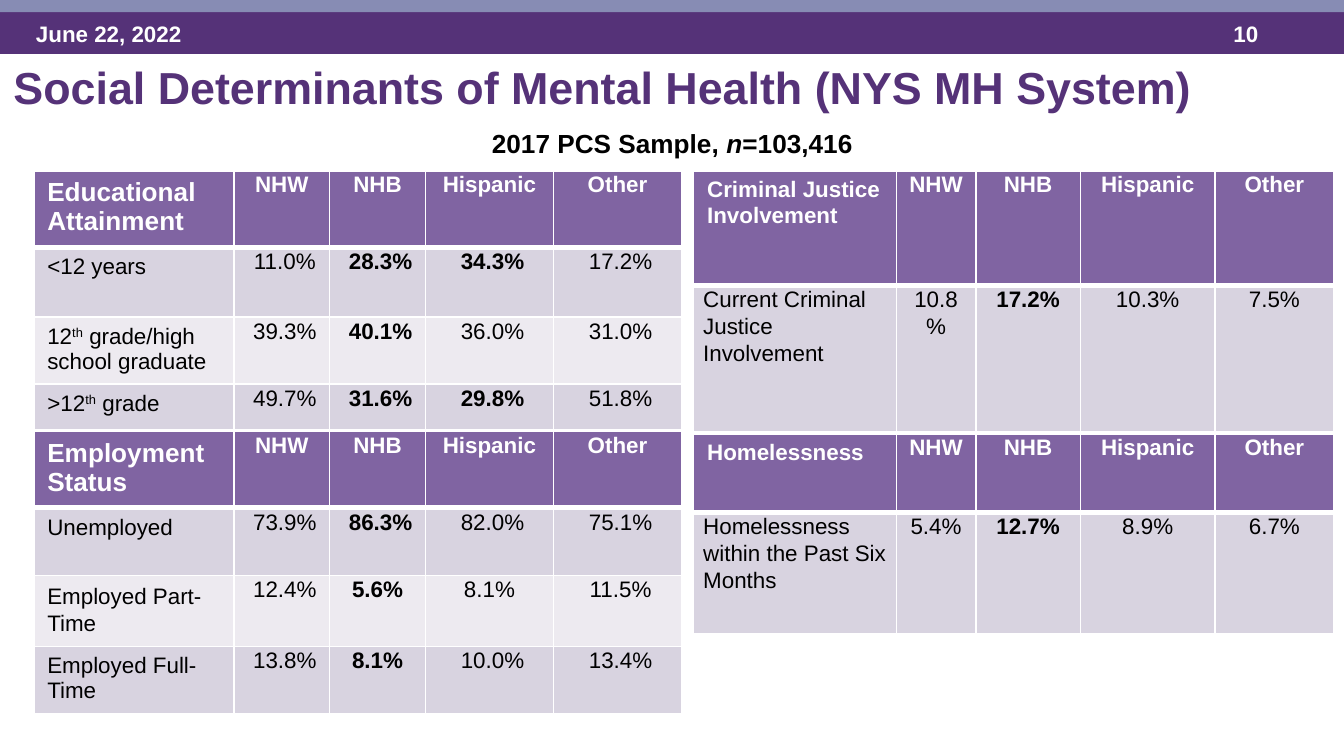
"""Build the slide on social determinants of mental health with its four tables."""
from pptx import Presentation
from pptx.dml.color import RGBColor
from pptx.enum.shapes import MSO_SHAPE
from pptx.enum.text import MSO_ANCHOR, PP_ALIGN
from pptx.oxml import parse_xml
from pptx.oxml.ns import nsdecls
from pptx.util import Cm, Pt

COLORS = {
    "white": "FFFFFF", "black": "000000", "purple": "553278", "blue": "878CB4",
    "header": "8064A2", "dark": "D8D3E0", "light": "EDEAF0",
}
GROUPS = ["NHW", "NHB", "Hispanic", "Other"]
LEFT_COLUMNS = [3.78, 1.81, 1.81, 2.42, 2.42]
RIGHT_COLUMNS = [3.83, 1.5, 1.98, 2.54, 2.25]
# A leading * marks a bold value and ^ encloses a superscript.
TABLES = [
    ("Educational Attainment", 14, 0.64, 3.23, LEFT_COLUMNS, [1.35, 1.32, 1.2, 0.87], [
        ["<12 years", " 11.0%", "* 28.3%", "* 34.3%", " 17.2%"],
        ["12^th^ grade/high school graduate", " 39.3%", "* 40.1%", " 36.0%", " 31.0%"],
        [">12^th^ grade", " 49.7%", "* 31.6%", "* 29.8%", " 51.8%"],
    ]),
    ("Criminal Justice Involvement", 12, 13.11, 3.23, RIGHT_COLUMNS, [2.17, 2.77], [
        ["Current Criminal Justice Involvement", "10.8%", "*17.2%", "10.3%", "7.5%"],
    ]),
    ("Employment\nStatus", 14, 0.64, 8.16, LEFT_COLUMNS, [1.35, 1.28, 1.28, 1.18], [
        ["Unemployed", " 73.9%", "* 86.3%", " 82.0%", " 75.1%"],
        ["Employed Part-Time", " 12.4%", "*5.6%", "8.1%", " 11.5%"],
        ["Employed Full-Time", " 13.8%", "*8.1%", " 10.0%", " 13.4%"],
    ]),
    ("Homelessness", 12, 13.11, 8.2, RIGHT_COLUMNS, [1.49, 2.3], [
        ["Homelessness within the Past Six Months", "5.4%", "*12.7%", "8.9%", "6.7%"],
    ]),
]


def style(para, size, color, bold):
    para.font.name = "Arial"
    para.font.size = Pt(size)
    para.font.bold = bold
    para.font.color.rgb = RGBColor.from_string(COLORS[color])


def paint(cell, color, top, bottom):
    properties = cell._tc.get_or_add_tcPr()
    for side, width in (("L", 1), ("R", 1), ("T", top), ("B", bottom)):
        properties.append(parse_xml(
            f'<a:ln{side} {nsdecls("a")} w="{Pt(width)}"><a:solidFill>'
            f'<a:srgbClr val="{COLORS["white"]}"/></a:solidFill></a:ln{side}>'))
    cell.fill.solid()
    cell.fill.fore_color.rgb = RGBColor.from_string(COLORS[color])


deck = Presentation()
deck.slide_width, deck.slide_height = Cm(25.4), Cm(14.29)
page = deck.slides.add_slide(deck.slide_layouts[5])

for top, height, color in ((0.18, 0.84, "purple"), (0, 0.23, "blue")):
    bar = page.shapes.add_shape(MSO_SHAPE.RECTANGLE, 0, Cm(top), deck.slide_width, Cm(height))
    bar.shadow.inherit = False
    bar.fill.solid()
    bar.fill.fore_color.rgb = RGBColor.from_string(COLORS[color])
    bar.line.fill.background()

for text, left, width in (("June 22, 2022", 0.43, 5.92), ("10", 23.06, 1.9)):
    box = page.shapes.add_textbox(Cm(left), Cm(0.25), Cm(width), Cm(0.76))
    box.text_frame.word_wrap = True
    para = box.text_frame.paragraphs[0]
    para.text = text
    style(para, 12, "white", True)

title = page.shapes.title
title.left, title.top, title.width, title.height = Cm(0), Cm(0.76), Cm(25.2), Cm(1.75)
title.text_frame.vertical_anchor = MSO_ANCHOR.MIDDLE
para = title.text_frame.paragraphs[0]
para.text = "Social Determinants of Mental Health (NYS MH System)"
para.alignment = PP_ALIGN.LEFT
style(para, 24, "purple", True)

sample = page.shapes.add_textbox(Cm(0.64), Cm(2.29), Cm(24.13), Cm(0.9))
sample.text_frame.word_wrap = True
para = sample.text_frame.paragraphs[0]
para.alignment = PP_ALIGN.CENTER
style(para, 14, "black", True)
for text in ("2017 PCS Sample, ", "n", "=103,416"):
    span = para.add_run()
    span.text = text
    span.font.italic = text == "n"

for heading, heading_size, left, top, columns, heights, records in TABLES:
    frame = page.shapes.add_table(len(heights), len(columns), Cm(left), Cm(top),
                                  Cm(sum(columns)), Cm(sum(heights)))
    table = frame.table
    for column, width in zip(table.columns, columns):
        column.width = Cm(width)
    for row, height in zip(table.rows, heights):
        row.height = Cm(height)
    for row_index, record in enumerate([[heading, *GROUPS], *records]):
        is_header = row_index == 0
        fill = "header" if is_header else "dark" if row_index % 2 else "light"
        for column_index, text in enumerate(record):
            cell = table.cell(row_index, column_index)
            paint(cell, fill, 3 if row_index == 1 else 1, 3 if is_header else 1)
            is_label = column_index == 0
            compact = not is_label or (columns is RIGHT_COLUMNS and not is_header)
            if compact:
                cell.margin_left = cell.margin_right = Cm(0.18)
                cell.margin_top = cell.margin_bottom = 0
            cell.text = text.lstrip("*").replace("^", "")
            for para in cell.text_frame.paragraphs:
                if "^" in text:
                    para.clear()
                    for part_index, part in enumerate(text.split("^")):
                        span = para.add_run()
                        span.text = part
                        if part_index % 2:
                            span.font._element.set("baseline", "30000")
                if not is_label:
                    para.alignment = PP_ALIGN.CENTER
                if compact or text == "Employed Part-Time":
                    para.line_spacing = 1.07
                    para.space_after = Pt(0 if is_header else 8)
                style(para, heading_size if is_header and is_label else 12,
                      "white" if is_header else "black", is_header or text.startswith("*"))

deck.save("out.pptx")
